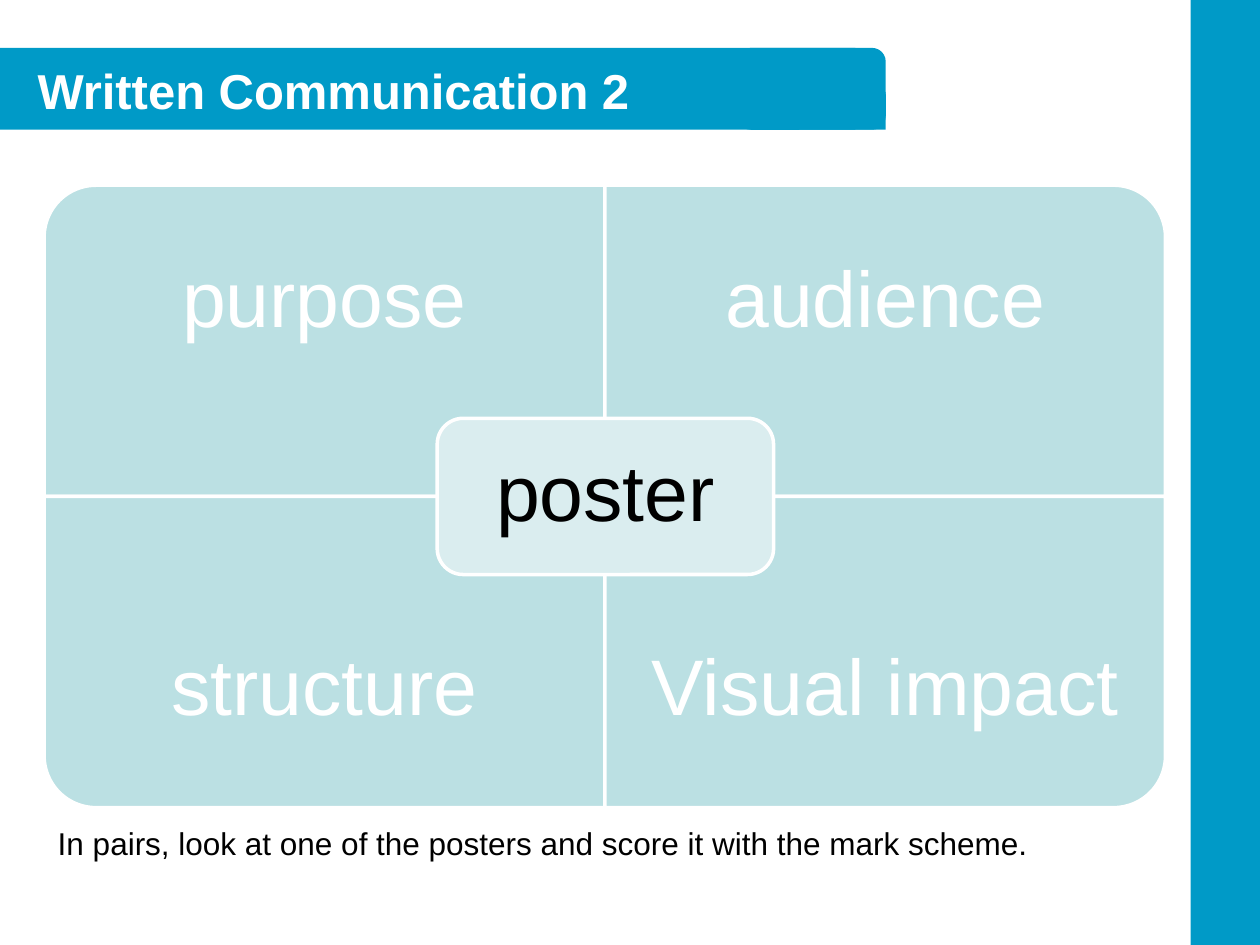
"""Build the Written Communication slide with its four-part poster matrix."""
from pptx import Presentation
from pptx.dml.color import RGBColor
from pptx.enum.shapes import MSO_SHAPE
from pptx.enum.text import MSO_ANCHOR, PP_ALIGN
from pptx.util import Inches, Pt

RECT = MSO_SHAPE.RECTANGLE
ROUND = MSO_SHAPE.ROUNDED_RECTANGLE
CORNER = MSO_SHAPE.ROUND_1_RECTANGLE
TOP, MIDDLE = MSO_ANCHOR.TOP, MSO_ANCHOR.MIDDLE
LEFT, CENTER = PP_ALIGN.LEFT, PP_ALIGN.CENTER
BLUE = RGBColor(0x00, 0x9A, 0xC7)
TEAL = RGBColor(0xBB, 0xE0, 0xE3)
PALE = RGBColor(0xDA, 0xED, 0xEF)
WHITE = RGBColor(0xFF, 0xFF, 0xFF)
BLACK = RGBColor(0x00, 0x00, 0x00)


def add_block(kind, x, y, w, h, fill, line=None):
    block = slide.shapes.add_shape(kind, Inches(x), Inches(y), Inches(w), Inches(h))
    block.shadow.inherit = False
    block.fill.solid()
    block.fill.fore_color.rgb = fill
    if line is None:
        block.line.fill.background()
    else:
        block.line.color.rgb = line
        block.line.width = Pt(2)
    return block


def add_label(text, x, y, w, h, size, color, align=LEFT, anchor=TOP, inset=None):
    box = slide.shapes.add_textbox(Inches(x), Inches(y), Inches(w), Inches(h))
    frame = box.text_frame
    frame.word_wrap = True
    frame.vertical_anchor = anchor
    if inset is not None:
        frame.margin_left = frame.margin_right = Inches(inset)
        frame.margin_top = frame.margin_bottom = Inches(inset)
    par = frame.paragraphs[0]
    par.text = text
    par.alignment = align
    par.font.name = "Arial"
    par.font.size = Pt(size)
    par.font.color.rgb = color
    return par


prs = Presentation()
prs.slide_width = Inches(10)
prs.slide_height = Inches(7.5)
slide = prs.slides.add_slide(prs.slide_layouts[6])

add_block(RECT, -0.02, 0.38, 6.81, 0.65, BLUE)
add_block(ROUND, 5.85, 0.38, 1.18, 0.65, BLUE)
add_block(RECT, 6.26, 0.73, 0.77, 0.3, BLUE)
add_block(RECT, 9.45, 0, 0.55, 7.5, BLUE)

mid_x, mid_y = 4.8, 3.94
wide, high, text_high = 4.45, 2.47, 1.86
parts = [
    ("purpose", -1, -1, 270),
    ("audience", 1, -1, 0),
    ("structure", -1, 1, 180),
    ("Visual impact", 1, 1, 90),
]
for text, col, row, angle in parts:
    w, h = (high, wide) if angle in (90, 270) else (wide, high)
    x = mid_x + col * wide / 2
    y = mid_y + row * high / 2
    part = add_block(CORNER, x - w / 2, y - h / 2, w, h, TEAL, WHITE)
    part.rotation = angle
    top = mid_y - high if row < 0 else mid_y + high - text_high
    label = add_label(text, x - wide / 2, top, wide, text_high, 45, WHITE, CENTER, MIDDLE, 0.35)
    label.line_spacing = 0.9

add_block(ROUND, 3.47, 3.32, 2.67, 1.24, PALE, WHITE)
hub = add_label("poster", 3.53, 3.38, 2.55, 1.12, 45, BLACK, CENTER, MIDDLE, 0.19)
hub.line_spacing = 0.9

title = add_label("Written Communication 2", 0.2, 0.4, 9, 0.63, 28, WHITE, anchor=MIDDLE)
title.font.bold = True
task = "In pairs, look at one of the posters and score it with the mark scheme."
add_label(task, 0.36, 6.49, 8.58, 0.4, 18, BLACK)

prs.save("out.pptx")
